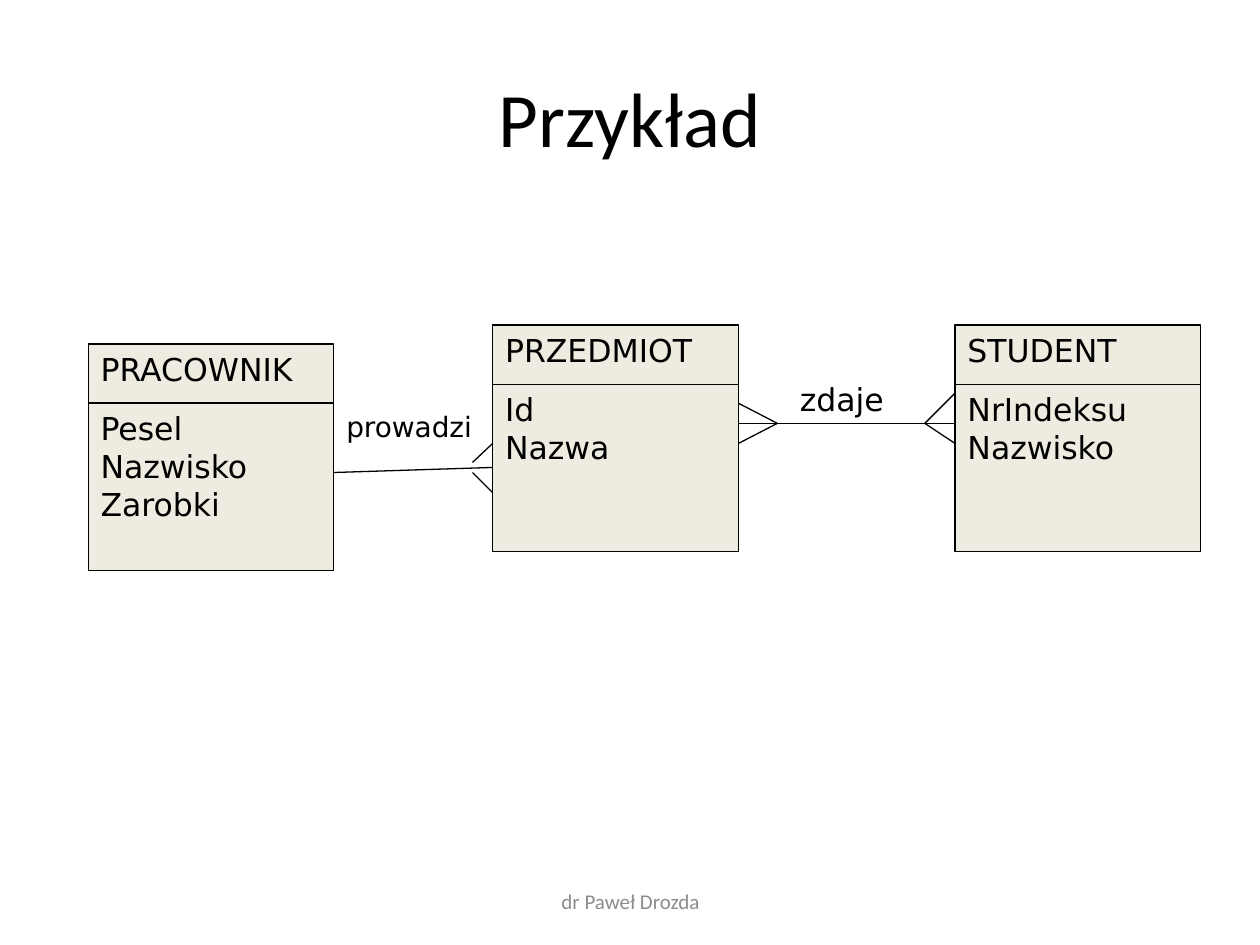
from dataclasses import dataclass

from lxml import etree
from pptx import Presentation
from pptx.dml.color import RGBColor
from pptx.enum import shapes, text
from pptx.oxml import ns
from pptx.util import Inches, Pt


@dataclass(frozen=True)
class Theme:
    ink: RGBColor = RGBColor(0x00, 0x00, 0x00)
    muted: RGBColor = RGBColor(0x8C, 0x8C, 0x8C)
    entity_fill: RGBColor = RGBColor(0xEE, 0xEC, 0xE1)
    heading_font: str = "Calibri"
    diagram_font: str = "DejaVu Sans"
    title_size: int = 44
    body_size: int = 18
    label_size: int = 16
    footer_size: int = 12
    line_width: float = 0.75


THEME = Theme()
ENTITY_WIDTH, HEADER_HEIGHT, BODY_HEIGHT = 1.95, 0.47, 1.33


def write(shape, lines, size, font=THEME.diagram_font, color=THEME.ink,
          align=text.PP_ALIGN.LEFT, anchor=text.MSO_ANCHOR.TOP):
    frame = shape.text_frame
    frame.word_wrap = True
    frame.vertical_anchor = anchor
    frame.text = "\n".join(lines)
    for paragraph in frame.paragraphs:
        paragraph.alignment = align
        paragraph.font.size = Pt(size)
        paragraph.font.name = font
        paragraph.font.color.rgb = color


def add_text(slide, box, content, size, **style):
    label = slide.shapes.add_textbox(*map(Inches, box))
    write(label, [content], size, **style)


def add_heading(slide, box, content, size, color):
    """Centred text in the heading font, used for title and footer."""
    add_text(slide, box, content, size, font=THEME.heading_font, color=color,
             align=text.PP_ALIGN.CENTER, anchor=text.MSO_ANCHOR.MIDDLE)


def add_cell(slide, box, lines):
    cell = slide.shapes.add_shape(shapes.MSO_SHAPE.RECTANGLE, *map(Inches, box))
    cell.shadow.inherit = False
    cell.fill.solid()
    cell.fill.fore_color.rgb = THEME.entity_fill
    cell.line.color.rgb = THEME.ink
    cell.line.width = Pt(THEME.line_width)
    write(cell, lines, THEME.body_size)


def add_entity(slide, left, top, name, attributes):
    add_cell(slide, (left, top + HEADER_HEIGHT, ENTITY_WIDTH, BODY_HEIGHT), attributes)
    add_cell(slide, (left, top, ENTITY_WIDTH, HEADER_HEIGHT), [name])


def add_line(slide, start, end):
    line = slide.shapes.add_connector(
        shapes.MSO_CONNECTOR.STRAIGHT, *map(Inches, (*start, *end)))
    line.line.color.rgb = THEME.ink
    line.line.width = Pt(THEME.line_width)
    etree.SubElement(line._element.spPr, ns.qn("a:effectLst"))


def add_crow_foot(slide, edge, tip, upper, lower, gap=0.0):
    """Two toes from the tip to heights on an entity's edge; gap parts them."""
    x, y = tip
    add_line(slide, (x, y - gap), (edge, upper))
    add_line(slide, (x, y), (edge, lower))


def add_diagram(slide, left, top):
    """Entities and their relationships, from the top left corner given."""
    employee, subject, student = left, left + 3.21, left + 6.88
    add_entity(slide, employee, top + 0.15, "PRACOWNIK", ["Pesel", "Nazwisko", "Zarobki"])
    add_entity(slide, student, top, "STUDENT", ["NrIndeksu", "Nazwisko"])
    add_entity(slide, subject, top, "PRZEDMIOT", ["Id", "Nazwa"])

    employee_right = employee + ENTITY_WIDTH
    subject_right = subject + ENTITY_WIDTH
    teaches, passes = top + 1.17, top + 0.78

    add_line(slide, (subject, teaches - 0.04), (employee_right, teaches))
    add_crow_foot(slide, subject, (subject - 0.16, teaches),
                  teaches - 0.23, teaches + 0.16, gap=0.08)
    add_text(slide, (employee_right, top + 0.62, 1.26, 0.37), "prowadzi", THEME.label_size)

    add_line(slide, (subject_right, passes), (student, passes))
    add_crow_foot(slide, student, (student - 0.24, passes), passes - 0.24, passes + 0.16)
    add_crow_foot(slide, subject_right, (subject_right + 0.31, passes),
                  passes - 0.16, passes + 0.16)
    add_text(slide, (subject_right + 0.39, top + 0.39, 1.09, 0.4), "zdaje", THEME.body_size)


def main():
    deck = Presentation()
    deck.slide_width, deck.slide_height = Inches(10), Inches(7.5)
    slide = deck.slides.add_slide(deck.slide_layouts[6])
    add_heading(slide, (0.5, 0.3, 9, 1.25), "Przykład", THEME.title_size, THEME.ink)
    add_heading(slide, (3.42, 6.95, 3.17, 0.4), "dr Paweł Drozda",
                THEME.footer_size, THEME.muted)
    add_diagram(slide, 0.7, 2.58)
    deck.save("out.pptx")


if __name__ == "__main__":
    main()
